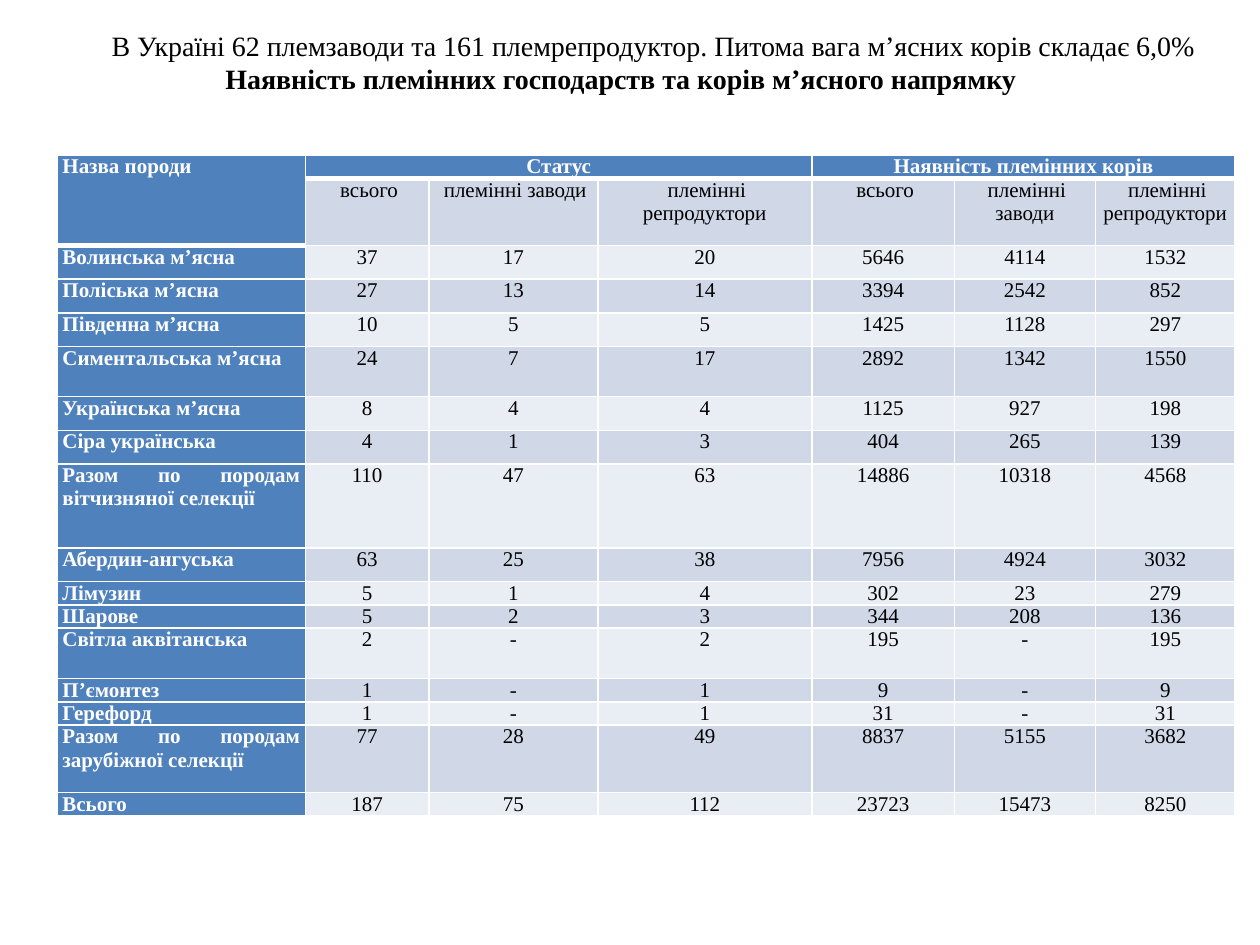
from lxml.etree import SubElement
from pptx import Presentation
from pptx.dml.color import RGBColor
from pptx.enum.text import MSO_ANCHOR, MSO_AUTO_SIZE, PP_ALIGN as Align
from pptx.oxml.ns import qn
from pptx.util import Pt

FONT = "Times New Roman"
COLORS = {
    "header": "4F81BD",
    "band_dark": "D0D8E8",
    "band_light": "E9EDF4",
    "border": "FFFFFF",
    "light_text": "FFFFFF",
    "text": "000000",
}

TITLE = "В Україні 62 племзаводи та 161 племрепродуктор. Питома вага м’ясних корів складає 6,0%"
SUBTITLE = "Наявність племінних господарств та корів м’ясного напрямку "

# Heading labels; blanks are covered by merged cells
GROUPS = ["Назва породи", "Статус", "", "", "Наявність племінних корів", "", ""]
KINDS = ["всього", "племінні заводи", "племінні репродуктори"]
BREEDS = [
    ["Волинська м’ясна ", 37, 17, 20, 5646, 4114, 1532],
    ["Поліська м’ясна", 27, 13, 14, 3394, 2542, 852],
    ["Південна м’ясна", 10, 5, 5, 1425, 1128, 297],
    ["Симентальська м’ясна", 24, 7, 17, 2892, 1342, 1550],
    ["Українська м’ясна", 8, 4, 4, 1125, 927, 198],
    ["Сіра українська", 4, 1, 3, 404, 265, 139],
    ["Разом по породам вітчизняної селекції", 110, 47, 63, 14886, 10318, 4568],
    ["Абердин-ангуська", 63, 25, 38, 7956, 4924, 3032],
    ["Лімузин", 5, 1, 4, 302, 23, 279],
    ["Шарове", 5, 2, 3, 344, 208, 136],
    ["Світла аквітанська", 2, "-", 2, 195, "-", 195],
    ["П’ємонтез", 1, "-", 1, 9, "-", 9],
    ["Герефорд", 1, "-", 1, 31, "-", 31],
    ["Разом по породам зарубіжної селекції", 77, 28, 49, 8837, 5155, 3682],
    ["Всього", 187, 75, 112, 23723, 15473, 8250],
]
ROWS = [GROUPS, [""] + KINDS * 2] + BREEDS

COLUMN_WIDTHS = [141.8, 70.6, 96.5, 122.4, 81.4, 80.6, 79.9]
LINE_UNIT = 9.6
ROW_UNITS = [1, 4, 2, 2, 2, 3, 2, 2, 5, 2, 1, 1, 3, 1, 1, 4, 1]


def style_paragraph(paragraph, size, color, bold, align, indent=0):
    paragraph.alignment = align
    font = paragraph.font
    font.name, font.size, font.bold = FONT, Pt(size), bold
    font.color.rgb = RGBColor.from_string(COLORS[color])
    if indent:
        properties = paragraph._p.get_or_add_pPr()
        properties.set("marL", "0")
        properties.set("indent", str(int(Pt(indent))))


def set_borders(cell, bottom, top):
    widths = {"a:lnL": 1, "a:lnR": 1, "a:lnT": top, "a:lnB": bottom}
    for side, width in widths.items():
        line = SubElement(cell._tc.get_or_add_tcPr(), qn(side), w=str(int(Pt(width))))
        fill = SubElement(line, qn("a:solidFill"))
        SubElement(fill, qn("a:srgbClr"), val=COLORS["border"])


def fill_cell(cell, value, row, column):
    is_heading = row == 0 or column == 0
    if is_heading:
        fill = "header"
    else:
        fill = "band_dark" if row % 2 else "band_light"

    cell.margin_left = cell.margin_right = Pt(3)
    cell.margin_top = cell.margin_bottom = 0
    cell.text = str(value)
    style_paragraph(
        cell.text_frame.paragraphs[0], 12,
        "light_text" if is_heading else "text", is_heading,
        Align.CENTER if column else Align.JUSTIFY,
        indent=2.25 if row == 1 and column else 0,
    )

    # A thick rule closes the heading, under the merged name cell as well
    thick_row = 1 if column == 0 else 0
    set_borders(cell,
                bottom=3 if row == 0 or row == thick_row else 1,
                top=3 if row == thick_row + 1 else 1)
    cell.fill.solid()
    cell.fill.fore_color.rgb = RGBColor.from_string(COLORS[fill])


def add_title(slide):
    frame = slide.shapes.add_textbox(Pt(16.6), Pt(12.2), Pt(678.2), Pt(46)).text_frame
    frame.word_wrap = False
    frame.auto_size = MSO_AUTO_SIZE.SHAPE_TO_FIT_TEXT
    frame.vertical_anchor = MSO_ANCHOR.MIDDLE
    frame.text = f"{TITLE}\n{SUBTITLE}"
    summary, heading = frame.paragraphs
    style_paragraph(summary, 16, "text", False, Align.CENTER, indent=35.4)
    style_paragraph(heading, 16, "text", True, Align.CENTER, indent=2.25)


def add_breed_table(slide):
    table = slide.shapes.add_table(
        len(ROWS), len(COLUMN_WIDTHS), Pt(32.7), Pt(88.6),
        Pt(sum(COLUMN_WIDTHS)), Pt(LINE_UNIT * sum(ROW_UNITS)),
    ).table
    for column, width in zip(table.columns, COLUMN_WIDTHS):
        column.width = Pt(width)
    for row, units in zip(table.rows, ROW_UNITS):
        row.height = Pt(LINE_UNIT * units)
    for r, values in enumerate(ROWS):
        for c, value in enumerate(values):
            fill_cell(table.cell(r, c), value, r, c)

    # Merged headings
    table.cell(0, 0).merge(table.cell(1, 0))
    for first in (1, 4):
        table.cell(0, first).merge(table.cell(0, first + 2))


def main():
    presentation = Presentation()
    presentation.slide_width, presentation.slide_height = Pt(720), Pt(540)
    slide = presentation.slides.add_slide(presentation.slide_layouts[6])
    add_breed_table(slide)
    add_title(slide)
    presentation.save("out.pptx")


if __name__ == "__main__":
    main()
